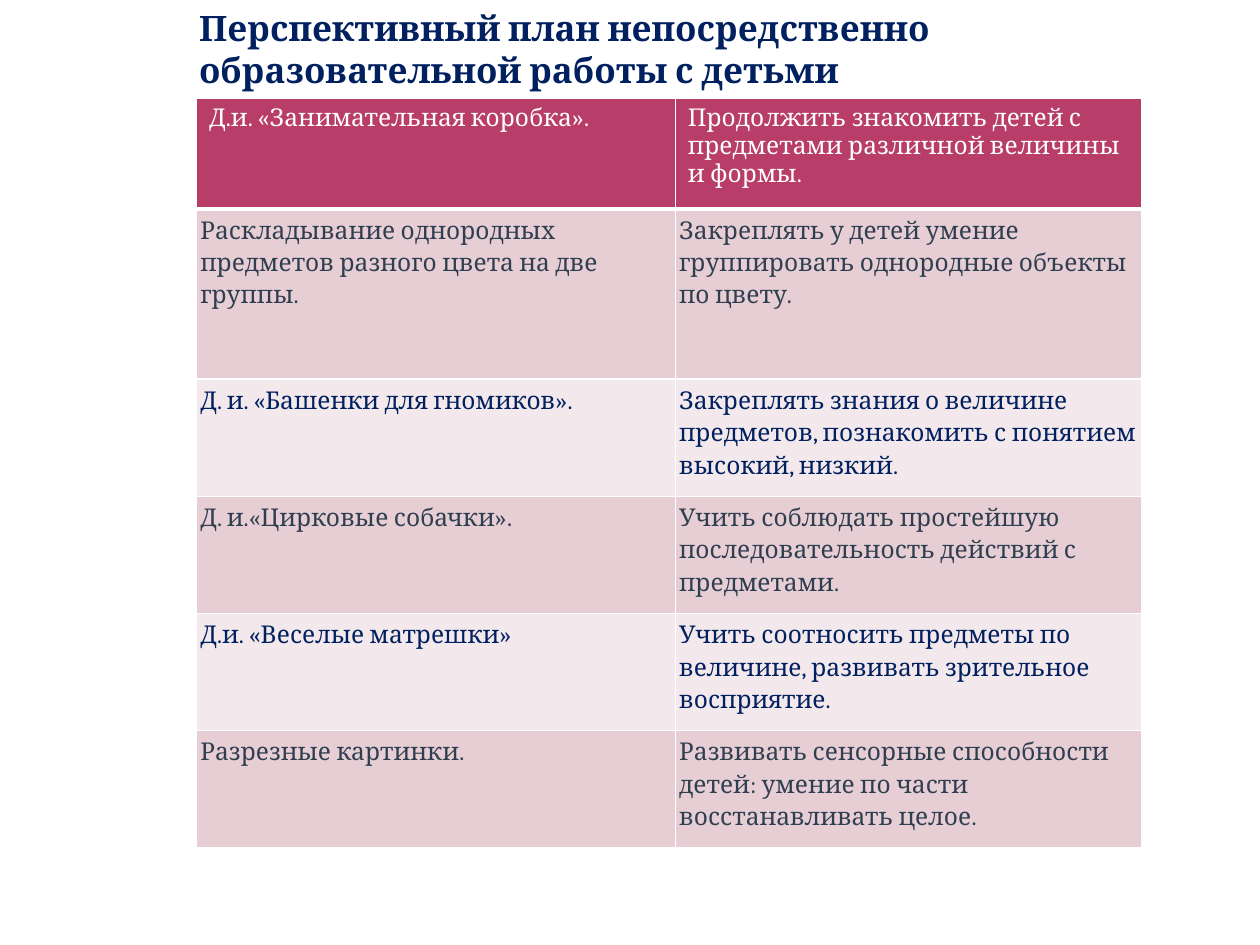
from dataclasses import dataclass
from typing import NamedTuple

from lxml.etree import SubElement
from pptx import Presentation
from pptx.dml.color import RGBColor
from pptx.enum.text import MSO_ANCHOR, MSO_AUTO_SIZE, PP_ALIGN
from pptx.oxml.ns import qn
from pptx.util import Inches, Pt


@dataclass(frozen=True)
class Theme:
    font: str = "Cambria"
    title_size: int = 20
    table_size: int = 14
    line_pitch: float = 18.5
    navy: str = "002060"
    slate: str = "303F50"
    white: str = "FFFFFF"
    header_fill: str = "B83D68"
    dark_band: str = "E6CED4"
    light_band: str = "F3E8EB"


class Activity(NamedTuple):
    name: str
    goal: str
    height: float = 0.93


THEME = Theme()
TITLE = "Перспективный план непосредственно образовательной работы с детьми"
COLUMN_WIDTHS = (3.8, 3.7)
ACTIVITIES = (
    Activity("Д.и. «Занимательная коробка».",
             "Продолжить знакомить детей с предметами различной величины и формы.", 0.88),
    Activity("Раскладывание однородных предметов разного цвета на две группы.",
             "Закреплять у детей умение группировать однородные объекты по цвету.", 1.35),
    Activity("Д. и. «Башенки для гномиков».",
             "Закреплять знания о величине предметов, познакомить с понятием высокий, низкий."),
    Activity("Д. и.«Цирковые собачки».",
             "Учить соблюдать простейшую последовательность действий с предметами."),
    Activity("Д.и. «Веселые матрешки»",
             "Учить соотносить предметы по величине, развивать зрительное восприятие."),
    Activity("Разрезные картинки.",
             "Развивать сенсорные способности детей: умение по части восстанавливать целое."),
)


def write(frame, text: str, *, size: float, color: str, bold: bool = False,
          pitch: float | None = None) -> None:
    """Fill a text frame with one left-aligned paragraph; pitch is exact line spacing."""
    frame.word_wrap = True
    paragraph = frame.paragraphs[0]
    paragraph.alignment = PP_ALIGN.LEFT
    if pitch:
        paragraph.line_spacing = Pt(pitch)
    run = paragraph.add_run()
    run.text = text
    run.font.name = THEME.font
    run.font.size = Pt(size)
    run.font.bold = bold
    run.font.color.rgb = RGBColor.from_string(color)


def add_borders(cell, color: str, bottom: float) -> None:
    """Draw 1 pt cell borders, with the bottom one of the given width."""
    properties = cell._tc.get_or_add_tcPr()
    for side, width in (("L", 1), ("R", 1), ("T", 1), ("B", bottom)):
        line = SubElement(properties, qn(f"a:ln{side}"), w=str(Pt(width)))
        fill = SubElement(line, qn("a:solidFill"))
        SubElement(fill, qn("a:srgbClr"), val=color)


def format_cell(cell, text: str, row: int) -> None:
    is_header = row == 0
    if is_header:
        fill, color = THEME.header_fill, THEME.white
    elif row % 2:
        fill, color = THEME.dark_band, THEME.slate
    else:
        fill, color = THEME.light_band, THEME.navy
    add_borders(cell, THEME.white, bottom=3 if is_header else 1)
    cell.fill.solid()
    cell.fill.fore_color.rgb = RGBColor.from_string(fill)
    if not is_header:
        cell.margin_left = cell.margin_right = Inches(0.03)
        cell.margin_top = cell.margin_bottom = Inches(0.03)
    write(cell.text_frame, text, size=THEME.table_size, color=color,
          pitch=None if is_header else THEME.line_pitch)


def add_title(slide) -> None:
    title = slide.shapes.title
    title.left, title.top = Inches(1.48), Inches(0)
    title.width, title.height = Inches(7.81), Inches(0.77)
    title.text_frame.auto_size = MSO_AUTO_SIZE.SHAPE_TO_FIT_TEXT
    title.text_frame.vertical_anchor = MSO_ANCHOR.MIDDLE
    write(title.text_frame, TITLE, size=THEME.title_size, color=THEME.navy, bold=True)


def add_plan(slide) -> None:
    height = sum(activity.height for activity in ACTIVITIES)
    plan = slide.shapes.add_table(
        len(ACTIVITIES), len(COLUMN_WIDTHS), Inches(1.56), Inches(0.78),
        Inches(sum(COLUMN_WIDTHS)), Inches(height)).table
    for column, width in zip(plan.columns, COLUMN_WIDTHS):
        column.width = Inches(width)
    for row, activity in enumerate(ACTIVITIES):
        plan.rows[row].height = Inches(activity.height)
        for column, text in enumerate((activity.name, activity.goal)):
            format_cell(plan.cell(row, column), text, row)


def main() -> None:
    presentation = Presentation()
    presentation.slide_width, presentation.slide_height = Inches(10), Inches(7.5)
    slide = presentation.slides.add_slide(presentation.slide_layouts[5])
    add_title(slide)
    add_plan(slide)
    presentation.save("out.pptx")


if __name__ == "__main__":
    main()
